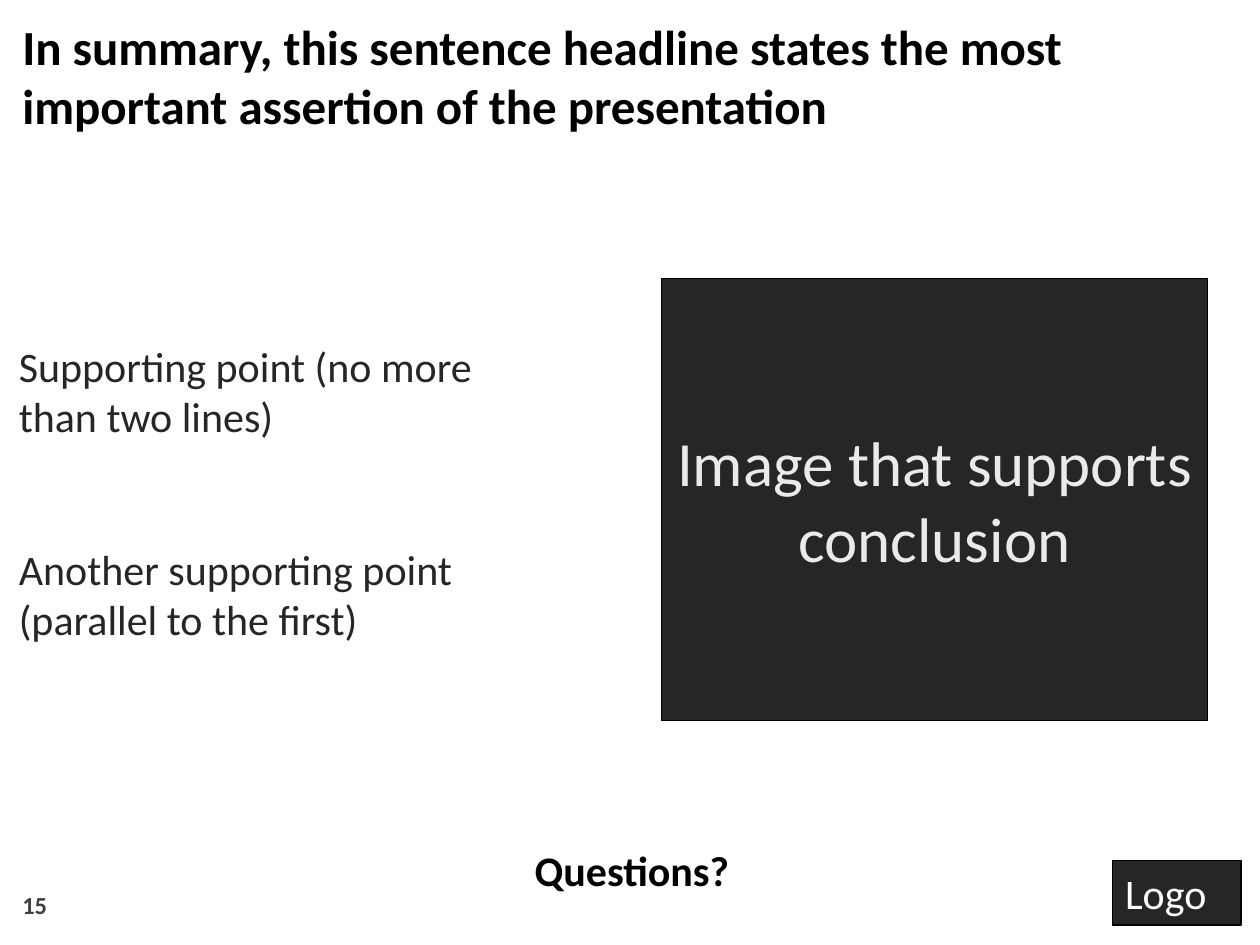
from pptx import Presentation
from pptx.dml.color import RGBColor
from pptx.enum.shapes import MSO_SHAPE
from pptx.enum.text import MSO_ANCHOR, PP_ALIGN
from pptx.util import Cm, Pt

THEME = {
    "font": "Calibri",
    "black": RGBColor(0x00, 0x00, 0x00),
    "dark": RGBColor(0x26, 0x26, 0x26),
    "grey": RGBColor(0x40, 0x40, 0x40),
    "pale": RGBColor(0xEA, 0xEA, 0xEA),
    "white": RGBColor(0xFF, 0xFF, 0xFF),
    "headline": Pt(28),
    "body": Pt(24),
    "panel": Pt(36),
    "number": Pt(14),
    "outline": Pt(0.75),
    "point_gap": Pt(58.5),
}

# Content: paragraphs, box in cm (left, top, width, height), type size, colour, options
TEXTS = [
    (["15"], (0.2, 17.65, 5.92, 1.02), "number", "grey",
     {"bold": True, "anchor": MSO_ANCHOR.BOTTOM}),
    (["Supporting point (no more than two lines)",
      "Another supporting point (parallel to the first)"],
     (0.2, 6.78, 10.59, 6.3), "body", "dark", {"insets": (0.18, 0.08)}),
    (["Questions?"], (10.49, 16.89, 4.5, 1.3), "body", "black",
     {"bold": True, "align": PP_ALIGN.CENTER}),
    (["In summary, this sentence headline states the most important "
      "assertion of the presentation"],
     (0.2, 0.2, 25, 2.62), "headline", "black", {"bold": True}),
]
PANELS = [
    (["Image that supports conclusion"], (13.34, 5.61, 11, 8.92), "panel", "pale",
     {"align": PP_ALIGN.CENTER, "anchor": MSO_ANCHOR.MIDDLE}),
    (["Logo"], (22.43, 17.35, 2.59, 1.3), "body", "white", {}),
]


def write_text(shape, paragraphs, size, color, options):
    frame = shape.text_frame
    side, edge = options.get("insets", (0.25, 0.13))
    frame_format = {
        "word_wrap": True,
        "vertical_anchor": options.get("anchor", MSO_ANCHOR.TOP),
        "margin_left": Cm(side), "margin_right": Cm(side),
        "margin_top": Cm(edge), "margin_bottom": Cm(edge),
    }
    for name, value in frame_format.items():
        setattr(frame, name, value)

    font_format = {"name": THEME["font"], "size": THEME[size],
                   "bold": options.get("bold", False)}
    for index, text in enumerate(paragraphs):
        paragraph = frame.add_paragraph() if index else frame.paragraphs[0]
        paragraph.alignment = options.get("align", PP_ALIGN.LEFT)
        if index:
            paragraph.space_before = THEME["point_gap"]
        run = paragraph.add_run()
        run.text = text
        for name, value in font_format.items():
            setattr(run.font, name, value)
        run.font.color.rgb = THEME[color]


def add_panel(slide, box):
    shape = slide.shapes.add_shape(MSO_SHAPE.RECTANGLE, *box)
    shape.shadow.inherit = False
    shape.fill.solid()
    shape.fill.fore_color.rgb = THEME["dark"]
    shape.line.color.rgb = THEME["black"]
    shape.line.width = THEME["outline"]
    return shape


def main():
    presentation = Presentation()
    presentation.slide_width, presentation.slide_height = Cm(25.4), Cm(19.05)
    slide = presentation.slides.add_slide(presentation.slide_layouts[6])

    # Headline, supporting points, closing question and slide number
    for paragraphs, box, *style in TEXTS:
        shape = slide.shapes.add_textbox(*map(Cm, box))
        write_text(shape, paragraphs, *style)

    # Dark image and logo panels
    for paragraphs, box, *style in PANELS:
        shape = add_panel(slide, tuple(map(Cm, box)))
        write_text(shape, paragraphs, *style)

    presentation.save("out.pptx")


if __name__ == "__main__":
    main()
